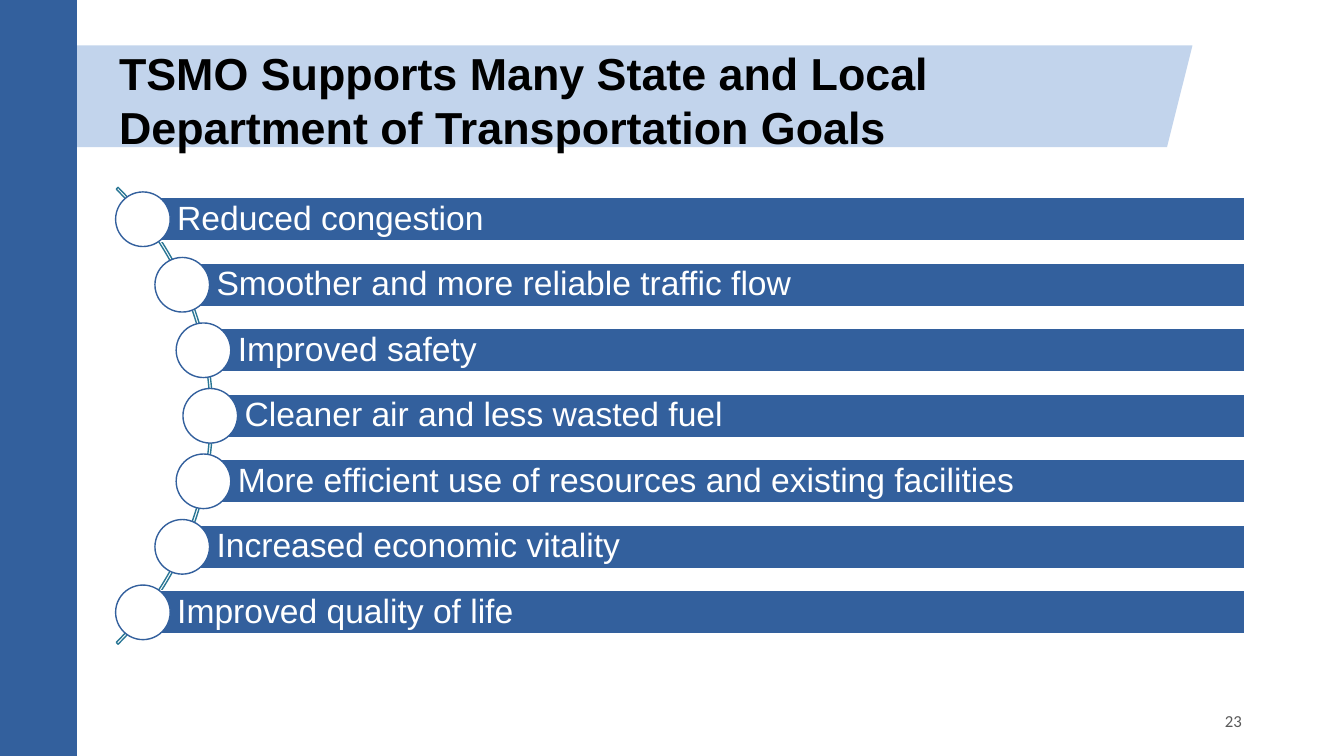
from math import sqrt

from pptx import Presentation
from pptx.dml.color import RGBColor
from pptx.enum.shapes import MSO_SHAPE
from pptx.enum.text import MSO_ANCHOR, MSO_AUTO_SIZE, PP_ALIGN
from pptx.util import Pt

RECTANGLE = MSO_SHAPE.RECTANGLE
PARALLELOGRAM = MSO_SHAPE.PARALLELOGRAM
BLOCK_ARC = MSO_SHAPE.BLOCK_ARC
OVAL = MSO_SHAPE.OVAL
TOP, MIDDLE = MSO_ANCHOR.TOP, MSO_ANCHOR.MIDDLE
LEFT, RIGHT = PP_ALIGN.LEFT, PP_ALIGN.RIGHT
NO_AUTOFIT = MSO_AUTO_SIZE.NONE

BLUE = RGBColor(0x33, 0x60, 0x9D)
PALE_BLUE = RGBColor(0xC2, 0xD4, 0xEC)
TEAL = RGBColor(0x2A, 0x77, 0x95)
WHITE = RGBColor(0xFF, 0xFF, 0xFF)
BLACK = RGBColor(0, 0, 0)
GREY = RGBColor(0x59, 0x59, 0x59)

SLIDE_WIDTH, SLIDE_HEIGHT = 960, 540
TITLE = "TSMO Supports Many State and Local Department of Transportation Goals"
GOALS = [
    "Reduced congestion",
    "Smoother and more reliable traffic flow",
    "Improved safety",
    "Cleaner air and less wasted fuel",
    "More efficient use of resources and existing facilities",
    "Increased economic vitality",
    "Improved quality of life",
]


def add_figure(slide, preset, box, fill=None, line=None):
    """Add a preset shape; box is left, top, width, height in points."""
    figure = slide.shapes.add_shape(preset, *map(Pt, box))
    figure.shadow.inherit = False
    if fill is None:
        figure.fill.background()
    else:
        figure.fill.solid()
        figure.fill.fore_color.rgb = fill
    if line is None:
        figure.line.fill.background()
    else:
        figure.line.color.rgb = line
        figure.line.width = Pt(1)
    return figure


def write(holder, wording, color, frame_format, paragraph_format, font_format):
    """Put one formatted paragraph into a shape, text box or placeholder."""
    frame = holder.text_frame
    frame.text = wording
    paragraph = frame.paragraphs[0]
    font = paragraph.runs[0].font
    font.color.rgb = color
    for target, values in ((frame, frame_format), (paragraph, paragraph_format),
                           (font, font_format)):
        for name, value in values.items():
            setattr(target, name, value)


def add_heading(slide, box):
    """Side bar, slanted band and title; box is the band's box."""
    left, top, width, height = box
    band = add_figure(slide, PARALLELOGRAM, box, PALE_BLUE)
    sidebar = add_figure(slide, RECTANGLE, (0, 0, 55, SLIDE_HEIGHT), BLUE)

    title = slide.shapes.title
    title.left, title.top = Pt(left + 60.5), Pt(top - 5.8)
    title.width, title.height = Pt(708.5), Pt(39.6)
    write(title, TITLE, BLACK,
          {"word_wrap": True, "auto_size": NO_AUTOFIT, "vertical_anchor": TOP,
           "margin_left": Pt(7.2), "margin_right": Pt(7.2), "margin_top": Pt(6.4)},
          {"alignment": LEFT, "line_spacing": 1.0},
          {"name": "Arial", "size": Pt(32), "bold": True})

    # The band and side bar lie behind the title
    for backdrop in (band, sidebar):
        title._element.addprevious(backdrop._element)


def add_goals(slide, box):
    """Goal bars whose round markers follow an arc; box spans the arc's height."""
    left, top, width, height = box
    right, center_y = left + width, top + height / 2
    center_x, marker_radius = left - 160.8, 229
    pitch, bar_height, marker_size = 46.8, 31, 39

    # Arc from -45 to 45 degrees
    arc = add_figure(slide, BLOCK_ARC,
                     (center_x - height / 2, top, height, height), line=TEAL)
    for index, value in enumerate((189, 27, 0.004)):
        arc.adjustments[index] = value

    for index, goal in enumerate(GOALS):
        offset = (index - (len(GOALS) - 1) / 2) * pitch
        x = center_x + sqrt(marker_radius ** 2 - offset ** 2)
        y = center_y + offset
        bar = add_figure(slide, RECTANGLE,
                         (x, y - bar_height / 2, right - x, bar_height), BLUE, WHITE)
        write(bar, goal, WHITE,
              {"word_wrap": True, "vertical_anchor": MIDDLE, "margin_left": Pt(24.5),
               "margin_right": Pt(5), "margin_top": Pt(5), "margin_bottom": Pt(5)},
              {"alignment": LEFT, "line_spacing": 0.9},
              {"name": "Arial", "size": Pt(24)})
        add_figure(slide, OVAL,
                   (x - marker_size / 2, y - marker_size / 2, marker_size, marker_size),
                   WHITE, BLUE)


def add_page_number(slide, box):
    """Right-aligned page number."""
    page_number = slide.shapes.add_textbox(*map(Pt, box))
    write(page_number, "23", GREY,
          {"word_wrap": True, "vertical_anchor": MIDDLE},
          {"alignment": RIGHT},
          {"name": "Calibri", "size": Pt(12)})


def main():
    deck = Presentation()
    deck.slide_width, deck.slide_height = Pt(SLIDE_WIDTH), Pt(SLIDE_HEIGHT)
    title_only = deck.slide_layouts[5]
    slide = deck.slides.add_slide(title_only)
    add_heading(slide, (17.3, 32.4, 834.5, 72.7))
    add_goals(slide, (82, 66.25, 807.3, 461.5))
    add_page_number(slide, (678.2, 500.4, 216, 28.8))
    deck.save("out.pptx")


if __name__ == "__main__":
    main()
